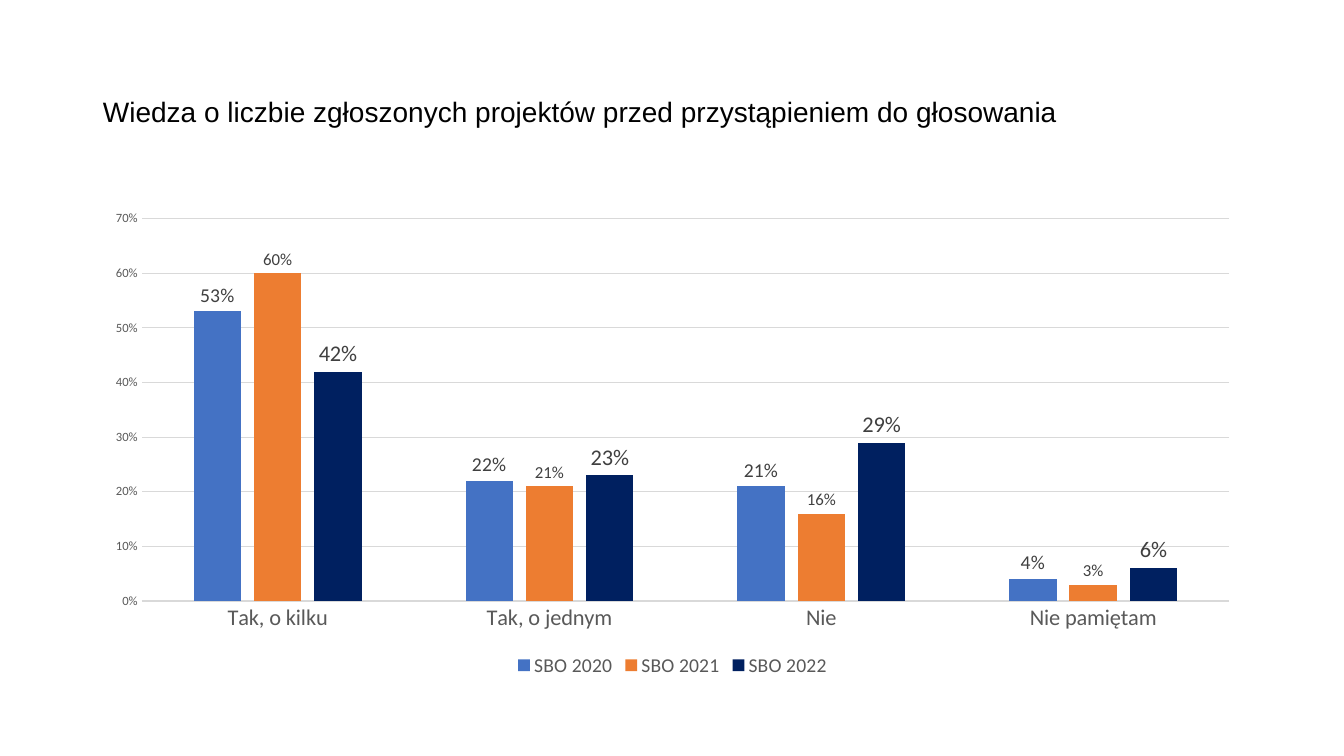
import pptx
import pptx.chart.data
import pptx.dml.color
import pptx.enum.chart
import pptx.enum.text
import pptx.util
from pptx.util import Inches

BLACK = pptx.dml.color.RGBColor(0x00, 0x00, 0x00)
DARK_GREY = pptx.dml.color.RGBColor(0x40, 0x40, 0x40)
GREY = pptx.dml.color.RGBColor(0x59, 0x59, 0x59)
LIGHT_GREY = pptx.dml.color.RGBColor(0xD9, 0xD9, 0xD9)
BLUE = pptx.dml.color.RGBColor(0x44, 0x72, 0xC4)
ORANGE = pptx.dml.color.RGBColor(0xED, 0x7D, 0x31)
NAVY = pptx.dml.color.RGBColor(0x00, 0x20, 0x60)

ANSWERS = ["Tak, o kilku", "Tak, o jednym", "Nie", "Nie pamiętam"]
# Name, share of each answer, bar colour, label size
EDITIONS = [
    ("SBO 2020", [0.53, 0.22, 0.21, 0.04], BLUE, 14),
    ("SBO 2021", [0.60, 0.21, 0.16, 0.03], ORANGE, 12),
    ("SBO 2022", [0.42, 0.23, 0.29, 0.06], NAVY, 16),
]


def set_font(font, name, size, color):
    font.name = name
    font.size = pptx.util.Pt(size)
    font.color.rgb = color


presentation = pptx.Presentation()
presentation.slide_width = Inches(13.33)
presentation.slide_height = Inches(7.5)
slide = presentation.slides.add_slide(presentation.slide_layouts.get_by_name("Title Only"))

title = slide.shapes.title
title.left, title.top = Inches(0.92), Inches(0.4)
title.width, title.height = Inches(11.5), Inches(1.45)
title.text_frame.vertical_anchor = pptx.enum.text.MSO_ANCHOR.MIDDLE
paragraph = title.text_frame.paragraphs[0]
paragraph.text = "Wiedza o liczbie zgłoszonych projektów przed przystąpieniem do głosowania"
paragraph.alignment = pptx.enum.text.PP_ALIGN.LEFT
paragraph.line_spacing = 0.9
set_font(paragraph.runs[0].font, "Arial", 20, BLACK)

chart_data = pptx.chart.data.CategoryChartData(number_format="0%")
chart_data.categories = ANSWERS
for name, shares, color, label_size in EDITIONS:
    chart_data.add_series(name, shares)
chart = slide.shapes.add_chart(
    pptx.enum.chart.XL_CHART_TYPE.COLUMN_CLUSTERED,
    Inches(0.92), Inches(2), Inches(11.5), Inches(4.76), chart_data,
).chart
chart.has_title = False
set_font(chart.font, "Calibri", 10, BLACK)

chart.has_legend = True
chart.legend.position = pptx.enum.chart.XL_LEGEND_POSITION.BOTTOM
chart.legend.include_in_layout = False
set_font(chart.legend.font, "Calibri", 14, GREY)

for axis, size in ((chart.category_axis, 16), (chart.value_axis, 9)):
    axis.major_tick_mark = pptx.enum.chart.XL_TICK_MARK.NONE
    axis.minor_tick_mark = pptx.enum.chart.XL_TICK_MARK.NONE
    set_font(axis.tick_labels.font, "Calibri", size, GREY)

value_axis = chart.value_axis
value_axis.minimum_scale = 0
value_axis.maximum_scale = 0.7
value_axis.major_unit = 0.1
value_axis.tick_labels.number_format = "0%"
value_axis.tick_labels.number_format_is_linked = False
value_axis.format.line.fill.background()
for line in (chart.category_axis.format.line, value_axis.major_gridlines.format.line):
    line.color.rgb = LIGHT_GREY
    line.width = pptx.util.Pt(0.75)

plot = chart.plots[0]
plot.gap_width = 219
plot.overlap = -27
plot.vary_by_categories = False
for series, (name, shares, color, label_size) in zip(plot.series, EDITIONS):
    series.format.fill.solid()
    series.format.fill.fore_color.rgb = color
    series.invert_if_negative = False
    labels = series.data_labels
    labels.show_value = True
    labels.number_format = "0%"
    labels.number_format_is_linked = False
    labels.position = pptx.enum.chart.XL_LABEL_POSITION.OUTSIDE_END
    set_font(labels.font, "Calibri", label_size, DARK_GREY)

presentation.save("out.pptx")
